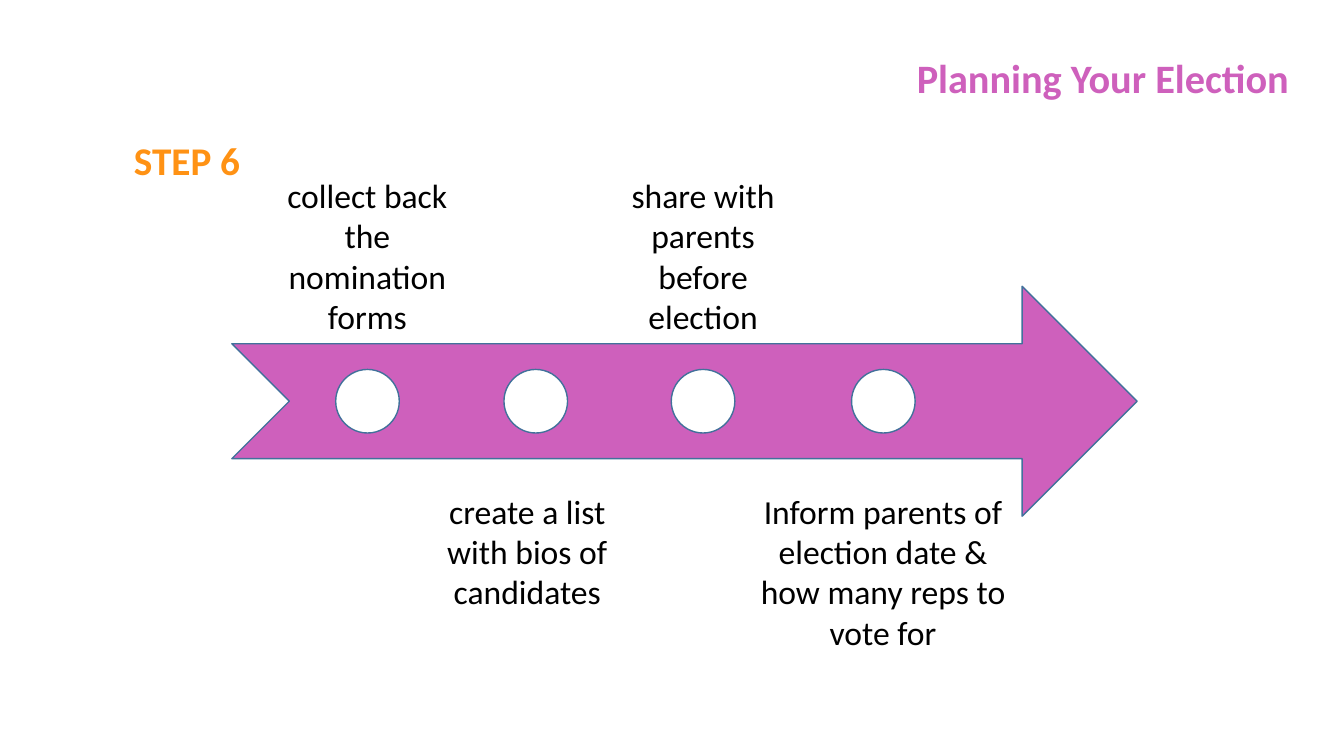
from pptx import Presentation
from pptx.dml.color import RGBColor
from pptx.enum.shapes import MSO_SHAPE
from pptx.enum.text import MSO_ANCHOR, PP_ALIGN
from pptx.util import Pt

ARROW = MSO_SHAPE.NOTCHED_RIGHT_ARROW
CIRCLE = MSO_SHAPE.OVAL
TOP, MIDDLE = MSO_ANCHOR.TOP, MSO_ANCHOR.MIDDLE
LEFT, CENTER, RIGHT = PP_ALIGN.LEFT, PP_ALIGN.CENTER, PP_ALIGN.RIGHT

COLORS = {
    "arrow": "CE60BC",
    "outline": "42719B",
    "marker": "FFFFFF",
    "text": "000000",
    "step": "FF9214",
}
FONT = "Calibri"
ARROW_TOP, ARROW_HEIGHT = 204.5, 164.2
MARKER_SIZE = 45.4
ABOVE, BELOW = 121.5, 347

STAGES = [
    ("collect back the nomination forms", 262.5, (188.6, ABOVE, 147.6, 123.8)),
    ("create a list with bios of candidates", 382.7, (298.1, BELOW, 157, 94.3)),
    ("share with parents before election", 502.2, (428.4, ABOVE, 147.6, 123.8)),
    ("Inform parents of election date & how many reps to vote for", 631,
     (535.7, BELOW, 190, 123.8)),
]


def add_outlined_shape(page, kind, bounds, fill):
    """Draw a filled preset shape with the common outline."""
    shape = page.shapes.add_shape(kind, *map(Pt, bounds))
    shape.shadow.inherit = False
    shape.fill.solid()
    shape.fill.fore_color.rgb = RGBColor.from_string(COLORS[fill])
    shape.line.color.rgb = RGBColor.from_string(COLORS["outline"])
    shape.line.width = Pt(1)


def add_label(page, text, bounds, size=24, color="text", bold=False,
              align=CENTER, anchor=TOP, spacing=1.0):
    """Add a wrapped text box holding one paragraph."""
    box = page.shapes.add_textbox(*map(Pt, bounds))
    frame = box.text_frame
    frame.word_wrap = True
    frame.vertical_anchor = anchor
    para = frame.paragraphs[0]
    para.alignment = align
    para.line_spacing = spacing
    span = para.add_run()
    span.text = text
    span.font.name = FONT
    span.font.size = Pt(size)
    span.font.bold = bold
    span.font.color.rgb = RGBColor.from_string(COLORS[color])


def add_stage(page, text, center, bounds):
    """Add one marker on the arrow and its label."""
    left = center - MARKER_SIZE / 2
    top = ARROW_TOP + (ARROW_HEIGHT - MARKER_SIZE) / 2
    add_outlined_shape(page, CIRCLE, (left, top, MARKER_SIZE, MARKER_SIZE), "marker")
    add_label(page, text, bounds)


def main():
    """Build the election timeline slide and save it."""
    deck = Presentation()
    deck.slide_width, deck.slide_height = Pt(960), Pt(540)
    page = deck.slides.add_slide(deck.slide_layouts[6])
    add_outlined_shape(page, ARROW, (165.6, ARROW_TOP, 646.6, ARROW_HEIGHT), "arrow")
    for text, center, bounds in STAGES:
        add_stage(page, text, center, bounds)
    add_label(page, "Planning Your Election", (30.2, 37.4, 897.8, 39.6), size=28.8,
              color="arrow", bold=True, align=RIGHT, anchor=MIDDLE, spacing=0.9)
    add_label(page, "STEP 6", (88.6, 93.6, 239.8, 41), size=28,
              color="step", bold=True, align=LEFT)
    deck.save("out.pptx")


if __name__ == "__main__":
    main()
